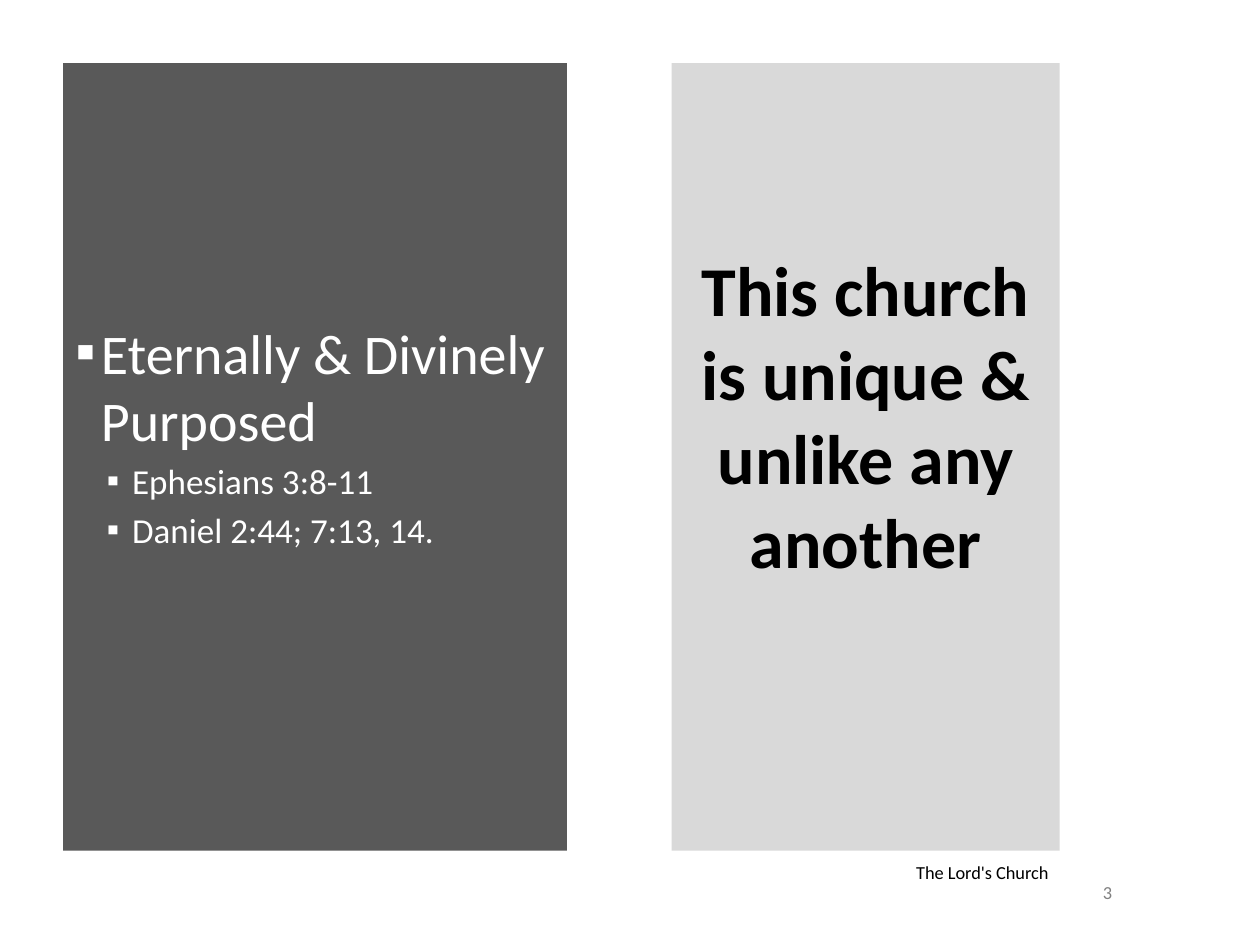
from lxml.etree import SubElement
from pptx import Presentation
from pptx.dml.color import RGBColor
from pptx.enum.text import MSO_ANCHOR, MSO_AUTO_SIZE, PP_ALIGN
from pptx.oxml.ns import qn
from pptx.util import Cm, Pt

FONT = "Calibri"
TITLE = "This church is unique & unlike any another"
POINTS = [
    (0, "Eternally & Divinely Purposed"),
    (1, "Ephesians 3:8-11"),
    (1, "Daniel 2:44; 7:13, 14."),
]
LEVELS = [
    {"size": 32, "indent": Cm(0.51), "before": 0},
    {"size": 20, "indent": Cm(1.14), "before": 4},
]
HANGING = Cm(0.51)
PANEL_TOP, PANEL_HEIGHT = 1.27, 15.88
LABELS = [
    ("3", (21.59, 17.78, 1.47, 0.43), PP_ALIGN.CENTER, MSO_ANCHOR.MIDDLE, "808080"),
    ("The Lord's Church", (13.54, 17.5, 7.85, 0.43), PP_ALIGN.RIGHT, MSO_ANCHOR.BOTTOM, "000000"),
]


def color(value):
    return RGBColor.from_string(value)


def add_text(paragraph, text, size, text_color, bold=False):
    run = paragraph.add_run()
    run.text = text
    run.font.name = FONT
    run.font.size = Pt(size)
    run.font.bold = bold
    run.font.color.rgb = color(text_color)


def place(shape, box):
    shape.left, shape.top, shape.width, shape.height = map(Cm, box)


def format_panel(shape, left, width, fill, bottom_margin):
    place(shape, (left, PANEL_TOP, width, PANEL_HEIGHT))
    shape.fill.solid()
    shape.fill.fore_color.rgb = color(fill)
    frame = shape.text_frame
    frame.word_wrap = True
    frame.auto_size = MSO_AUTO_SIZE.NONE
    frame.vertical_anchor = MSO_ANCHOR.MIDDLE
    frame.margin_bottom = Cm(bottom_margin)
    return frame


def add_bullet(paragraph, indent):
    properties = paragraph._p.get_or_add_pPr()
    properties.set("marL", str(indent))
    properties.set("indent", str(-HANGING))
    bullet_color = SubElement(properties, qn("a:buClr"))
    SubElement(bullet_color, qn("a:srgbClr"), val="FFFFFF")
    SubElement(properties, qn("a:buFont"), typeface=FONT)
    SubElement(properties, qn("a:buChar"), char="▪")


def main():
    """Build the slide with a list panel, a title panel and footer labels."""
    presentation = Presentation()
    presentation.slide_width, presentation.slide_height = Cm(25.4), Cm(19.05)
    slide = presentation.slides.add_slide(presentation.slide_layouts[1])

    frame = format_panel(slide.placeholders[1], 1.27, 10.16, "595959", 1.03)
    for index, (level, text) in enumerate(POINTS):
        paragraph = frame.add_paragraph() if index else frame.paragraphs[0]
        style = LEVELS[level]
        paragraph.level = level
        add_bullet(paragraph, style["indent"])
        paragraph.space_before = Pt(style["before"])
        add_text(paragraph, text, style["size"], "FFFFFF")

    frame = format_panel(slide.shapes.title, 13.54, 7.82, "D9D9D9", 1.85)
    paragraph = frame.paragraphs[0]
    paragraph.alignment = PP_ALIGN.CENTER
    add_text(paragraph, TITLE, 40, "000000", bold=True)

    for text, box, alignment, anchor, text_color in LABELS:
        label = slide.shapes.add_textbox(*map(Cm, box))
        label.text_frame.word_wrap = True
        label.text_frame.vertical_anchor = anchor
        paragraph = label.text_frame.paragraphs[0]
        paragraph.alignment = alignment
        add_text(paragraph, text, 10.5, text_color)

    presentation.save("out.pptx")


if __name__ == "__main__":
    main()
